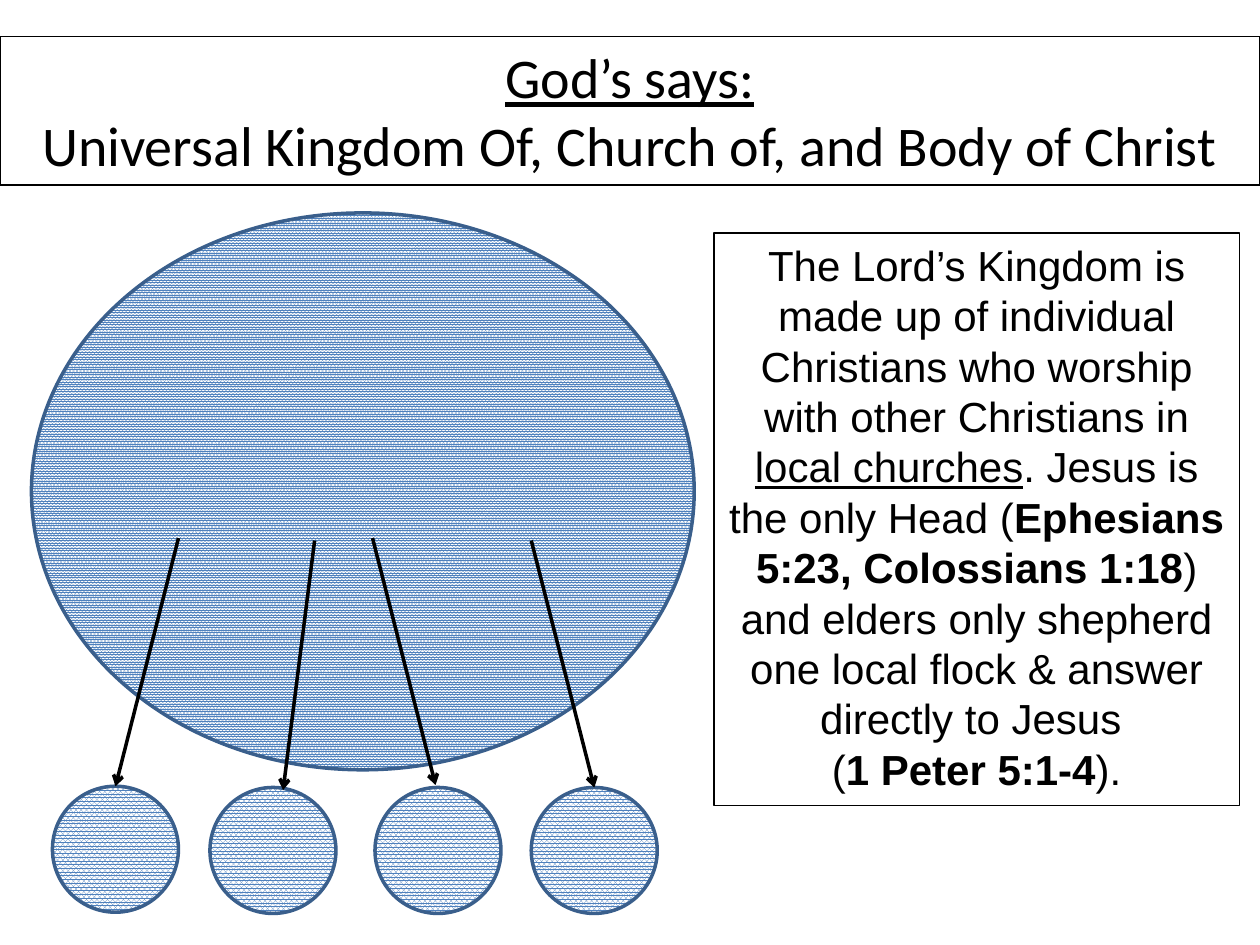
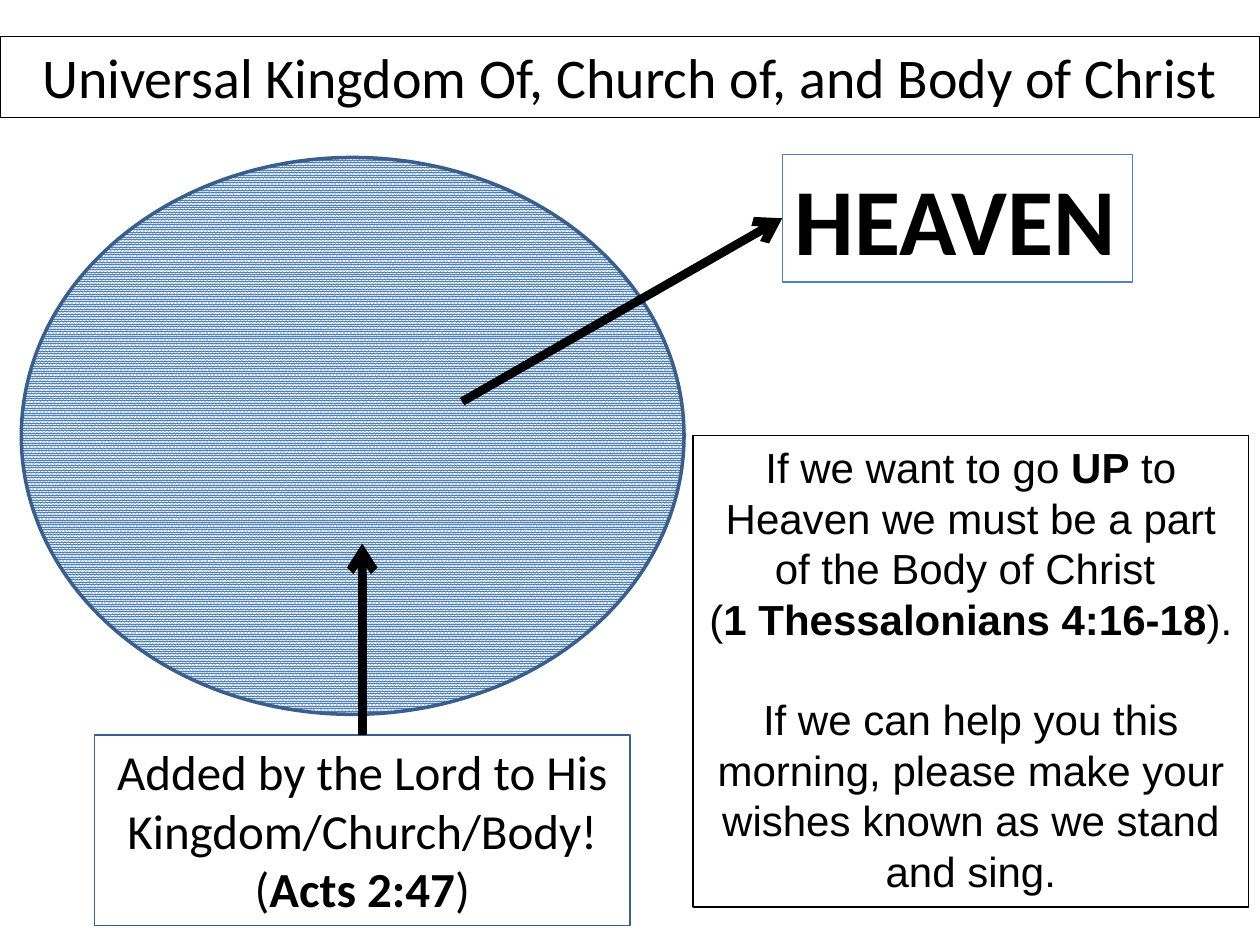
from lxml import etree
from pptx import Presentation
from pptx.dml.color import RGBColor
from pptx.enum.dml import MSO_PATTERN
from pptx.enum.shapes import MSO_CONNECTOR, MSO_SHAPE
from pptx.enum.text import PP_ALIGN
from pptx.oxml.ns import qn
from pptx.util import Pt

BLACK, WHITE, BLUE, DARK_BLUE = "000000", "FFFFFF", "4F81BD", "3A5F8C"
TITLE = "Universal Kingdom Of, Church of, and Body of Christ"
LINE_PITCH = 28.8  # line height of the Arial passages


def rgb(hex_color):
    return RGBColor.from_string(hex_color)


def add_run(paragraph, text, font_name, size, style):
    """Style is any mix of b (bold) and u (underlined)."""
    run = paragraph.add_run()
    run.text = text
    run.font.name = font_name
    run.font.size = Pt(size)
    run.font.color.rgb = rgb(BLACK)
    run.font.bold = "b" in style
    run.font.underline = "u" in style


def framed_text(slide, box, paragraphs, font_name, size, border=BLACK,
                fill=None, align=PP_ALIGN.CENTER, wrap=True):
    """Bordered text; each paragraph is a list of (text, style) runs."""
    frame = slide.shapes.add_textbox(*map(Pt, box))
    frame.line.color.rgb = rgb(border)
    frame.line.width = Pt(0.75)
    if fill:
        frame.fill.solid()
        frame.fill.fore_color.rgb = rgb(fill)
    text_frame = frame.text_frame
    text_frame.word_wrap = wrap
    for index, runs in enumerate(paragraphs):
        paragraph = text_frame.add_paragraph() if index else text_frame.paragraphs[0]
        paragraph.alignment = align
        for text, style in runs:
            add_run(paragraph, text, font_name, size, style)
    return frame


def title_band(slide, height, paragraphs):
    framed_text(slide, (0, 21, 720, height), paragraphs, "Calibri", 32)


def passage(slide, box, paragraphs):
    frame = framed_text(slide, box, paragraphs, "Arial", 24, fill=WHITE)
    for paragraph in frame.text_frame.paragraphs:
        paragraph.line_spacing = Pt(LINE_PITCH)
    return frame


def patterned_ellipse(slide, box, pattern):
    ellipse = slide.shapes.add_shape(MSO_SHAPE.OVAL, *map(Pt, box))
    ellipse.shadow.inherit = False
    ellipse.fill.patterned()
    ellipse.fill.pattern = pattern
    ellipse.fill.fore_color.rgb = rgb(BLUE)
    ellipse.fill.back_color.rgb = rgb(WHITE)
    ellipse.line.color.rgb = rgb(DARK_BLUE)
    ellipse.line.width = Pt(2)


def universal_church(slide, left, top):
    patterned_ellipse(slide, (left, top, 378.7, 318.2), MSO_PATTERN.PERCENT_90)


def arrow(slide, start, end, width):
    connector = slide.shapes.add_connector(
        MSO_CONNECTOR.STRAIGHT, *map(Pt, (*start, *end)))
    connector.line.color.rgb = rgb(BLACK)
    connector.line.width = Pt(width)
    line = connector.line._get_or_add_ln()
    etree.SubElement(line, qn("a:tailEnd"), type="arrow")
    etree.SubElement(connector._element.spPr, qn("a:effectLst"))
    return connector


def local_churches(slide, left, top):
    """Row of circles, each with an arrow from the universal church."""
    # circle x, circle y, arrow start x, start y, arrow end x, end y
    churches = [
        (0, 0, 72, -141.8, 36, 0),
        (90, 0.7, 149.8, -140.4, 131.8, 2.2),
        (184.3, 0.7, 182.9, -141.8, 218.9, -0.7),
        (273.6, 0.7, 273.6, -140.4, 309.6, 0.7),
    ]
    for x, y, *_ in churches:
        patterned_ellipse(slide, (left + x, top + y, 72, 72), MSO_PATTERN.PERCENT_80)
    for _, _, start_x, start_y, end_x, end_y in churches:
        arrow(slide, (left + start_x, top + start_y),
              (left + end_x, top + end_y), 2)


def kingdom_slide(slide):
    universal_church(slide, 18, 121.7)
    title_band(slide, 84.7, [[("God’s says:", "u")], [(TITLE, "")]])
    passage(slide, (408, 133.2, 300.2, 327), [
        [("The Lord’s Kingdom is made up of individual Christians who "
          "worship with other Christians in ", ""),
         ("local churches", "u"),
         (". Jesus is the only Head (", ""),
         ("Ephesians 5:23, Colossians 1:18", "b"),
         (") and elders only shepherd one local flock & answer directly "
          "to Jesus ", "")],
        [("(", ""), ("1 Peter 5:1-4", "b"), (").", "")],
    ])
    local_churches(slide, 30, 449.3)


def added_by_the_lord(slide, left, top):
    added = framed_text(slide, (left, top, 306, 108.7), [
        [("Added by the Lord to His Kingdom/Church/Body! (", ""),
         ("Acts 2:47", "b"), (")", "")],
    ], "Calibri", 28, border=DARK_BLUE)
    into_church = arrow(slide, (left + 153, top), (left + 153, top - 109.4), 5)
    into_church.begin_connect(added, 0)


def heaven_goal(slide, left, top):
    heaven = framed_text(slide, (left, top, 200.2, 72.7), [[("HEAVEN", "b")]],
                         "Calibri", 54, border=BLUE, align=PP_ALIGN.LEFT,
                         wrap=False)
    upward = arrow(slide, (left - 182.9, top + 141.1), (left, top + 36.4), 5)
    upward.end_connect(heaven, 1)


def heaven_slide(slide):
    universal_church(slide, 12.2, 90)
    title_band(slide, 46, [[(TITLE, "")]])
    invitation = passage(slide, (396, 249, 317.5, 269.3), [
        [("If we want to go ", ""), ("UP", "b"),
         (" to Heaven we must be a part of the Body of Christ ", "")],
        [("(", ""), ("1 Thessalonians 4:16-18", "b"), ("). ", "")],
        [("If we can help you this morning, please make your wishes known "
          "as we stand and sing.", "")],
    ])
    invitation.text_frame.paragraphs[-1].space_before = Pt(LINE_PITCH)
    added_by_the_lord(slide, 54, 420)
    heaven_goal(slide, 447, 88.4)


def main():
    presentation = Presentation()
    presentation.slide_width, presentation.slide_height = Pt(720), Pt(540)
    blank = presentation.slide_layouts[6]
    for build in (kingdom_slide, heaven_slide):
        build(presentation.slides.add_slide(blank))
    presentation.save("out.pptx")


if __name__ == "__main__":
    main()
